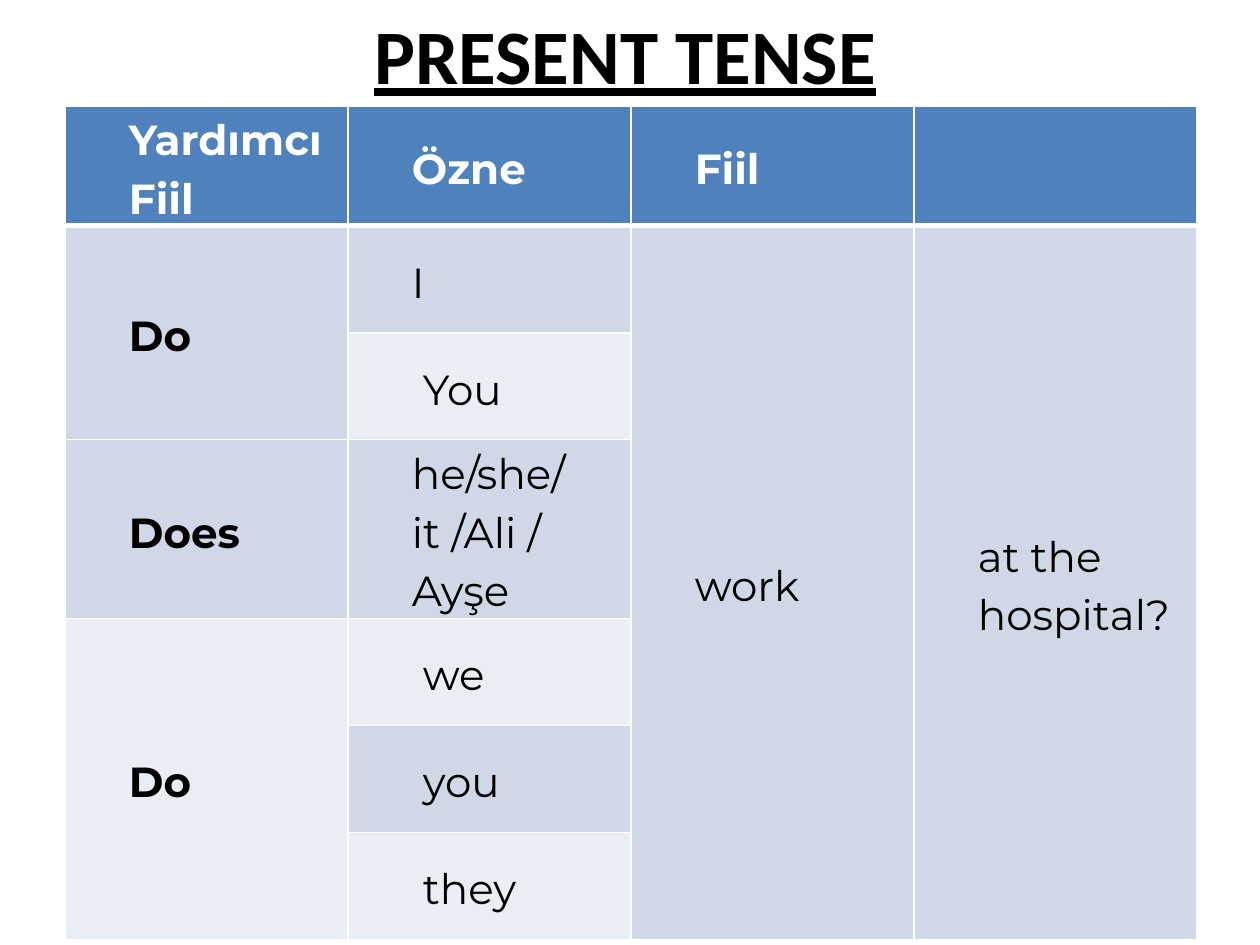
"""Build the present tense question table slide."""
import pptx
import pptx.dml.color
import pptx.enum.text
import pptx.oxml
import pptx.util

THEME = {
    "title_font": "Calibri", "title_size": 44,
    "table_font": "Montserrat", "table_size": 24,
    "text": "000000", "header_text": "FFFFFF", "border": "FFFFFF",
    "header": "4F81BD", "dark": "D0D8E8", "light": "E9EDF4",
}
EMU_PER_PX = 914400 / 126
COLUMN_WIDTH = 283
ROW_HEIGHTS = [108, 107, 107, 163, 107, 107, 107]
CELL_MARGIN = 1
TEXT_INDENT = 63
HEADERS = ["Yardımcı\vFiil", "Özne", "Fiil", ""]
SUBJECTS = ["I", " You", "he/she/it /Ali / Ayşe", " we", " you", " they"]
AUXILIARIES = [(1, 2, "Do", "dark"), (3, 3, "Does", "dark"), (4, 6, "Do", "light")]
ENDINGS = [(2, "work"), (3, "at the hospital?")]


def px(length):
    return pptx.util.Emu(round(length * EMU_PER_PX))


def fill_cell(cell, text, fill, bold=False, color="text"):
    cell.fill.solid()
    cell.fill.fore_color.rgb = pptx.dml.color.RGBColor.from_string(THEME[fill])
    cell.vertical_anchor = pptx.enum.text.MSO_ANCHOR.MIDDLE
    cell.margin_left = cell.margin_right = px(CELL_MARGIN)
    cell.margin_top = cell.margin_bottom = px(CELL_MARGIN)
    cell.text = text
    paragraph = cell.text_frame.paragraphs[0]
    paragraph.line_spacing = 1.15
    properties = paragraph._p.get_or_add_pPr()
    properties.set("marL", str(px(TEXT_INDENT)))
    properties.set("indent", "0")
    paragraph.font.name = THEME["table_font"]
    paragraph.font.size = pptx.util.Pt(THEME["table_size"])
    paragraph.font.bold = bold
    paragraph.font.color.rgb = pptx.dml.color.RGBColor.from_string(THEME[color])


presentation = pptx.Presentation()
presentation.slide_width = px(1260)
presentation.slide_height = px(945)
slide = presentation.slides.add_slide(presentation.slide_layouts[5])

heading = slide.shapes.title
heading.left, heading.top, heading.width, heading.height = px(64), px(0), px(1123), px(107)
heading.text_frame.text = "PRESENT TENSE"
heading.text_frame.vertical_anchor = pptx.enum.text.MSO_ANCHOR.MIDDLE
heading_line = heading.text_frame.paragraphs[0]
heading_line.alignment = pptx.enum.text.PP_ALIGN.CENTER
heading_line.font.name = THEME["title_font"]
heading_line.font.size = pptx.util.Pt(THEME["title_size"])
heading_line.font.bold = True
heading_line.font.underline = True
heading_line.font.color.rgb = pptx.dml.color.RGBColor.from_string(THEME["text"])

tense_table = slide.shapes.add_table(
    len(ROW_HEIGHTS), len(HEADERS), px(65), px(106),
    px(COLUMN_WIDTH * len(HEADERS)), px(sum(ROW_HEIGHTS))).table
for column in tense_table.columns:
    column.width = px(COLUMN_WIDTH)
for row, height in zip(tense_table.rows, ROW_HEIGHTS):
    row.height = px(height)

for row_index, row in enumerate(tense_table.rows):
    for cell in row.cells:
        for side in "LRTB":
            header_rule = (row_index, side) in [(0, "B"), (1, "T")]
            width = pptx.util.Pt(3 if header_rule else 1)
            cell._tc.get_or_add_tcPr().append(pptx.oxml.parse_xml(
                f'<a:ln{side} xmlns:a="http://schemas.openxmlformats.org/drawingml/2006/main"'
                f' w="{width}"><a:solidFill><a:srgbClr val="{THEME["border"]}"/>'
                f'</a:solidFill></a:ln{side}>'))

for column_index, label in enumerate(HEADERS):
    fill_cell(tense_table.cell(0, column_index), label, "header", True, "header_text")
for row_index, subject in enumerate(SUBJECTS, 1):
    fill_cell(tense_table.cell(row_index, 1), subject, "dark" if row_index % 2 else "light")
for first, last, auxiliary, fill in AUXILIARIES:
    if last > first:
        tense_table.cell(first, 0).merge(tense_table.cell(last, 0))
    fill_cell(tense_table.cell(first, 0), auxiliary, fill, True)
for column_index, ending in ENDINGS:
    tense_table.cell(1, column_index).merge(tense_table.cell(len(SUBJECTS), column_index))
    fill_cell(tense_table.cell(1, column_index), ending, "dark")

presentation.save("out.pptx")
